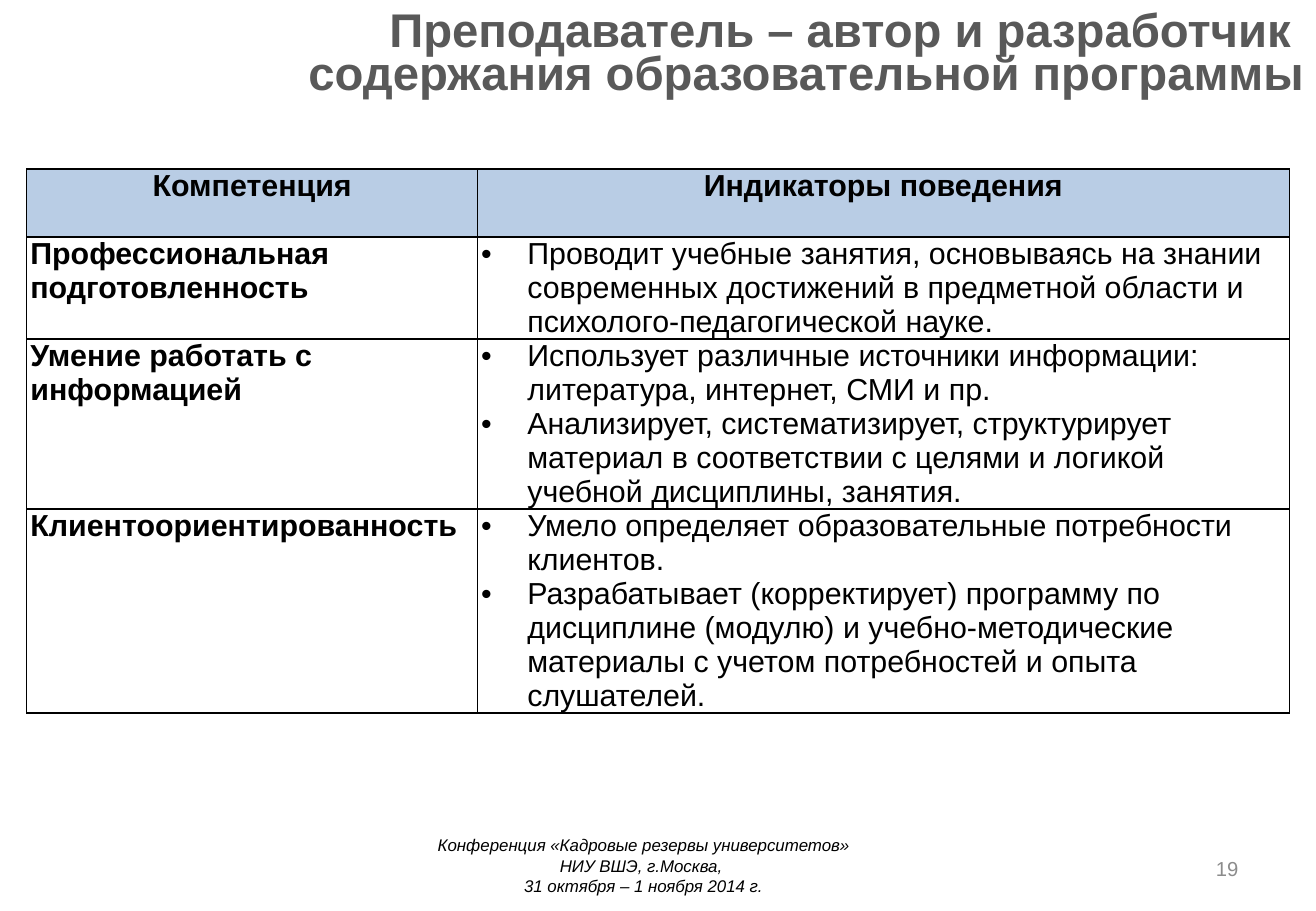
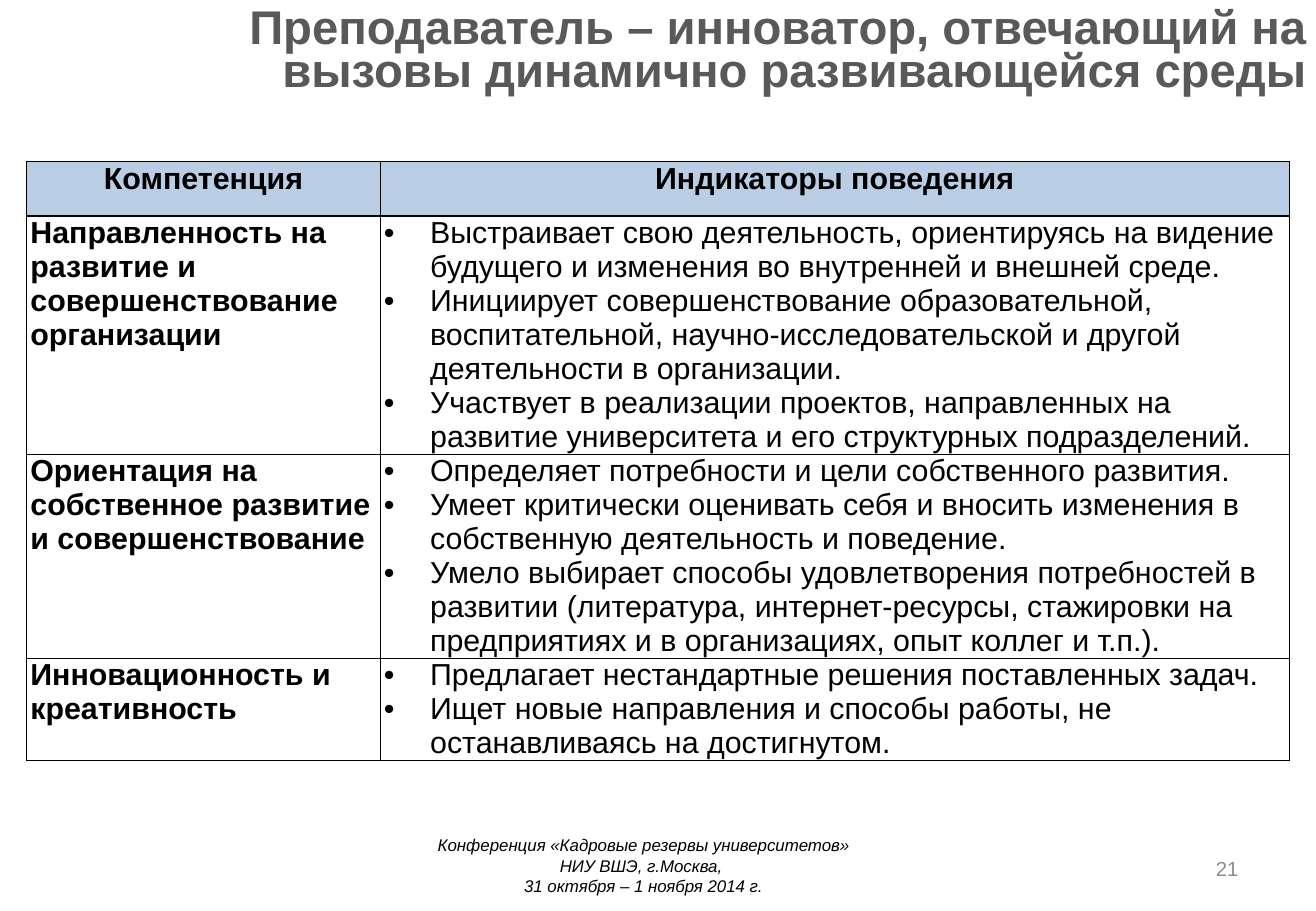
from pptx import Presentation
from pptx.dml.color import RGBColor
from pptx.enum.text import MSO_ANCHOR, MSO_AUTO_SIZE, PP_ALIGN
from pptx.oxml import parse_xml
from pptx.oxml.ns import nsdecls
from pptx.util import Inches, Pt

# Shared look
FONT = "Arial"
BLACK, TITLE_GRAY, NUMBER_GRAY, HEADER_BLUE = "000000", "595959", "8C8C8C", "B9CDE5"
HEADERS = ["Компетенция", "Индикаторы поведения"]
TABLE_LEFT, TABLE_WIDTH = 0.22, 10.39
FOOTER = [
    "Конференция «Кадровые резервы университетов»",
    "НИУ ВШЭ, г.Москва, ",
    "31 октября – 1 ноября 2014 г.",
]

# Content of each slide
SLIDES = [
    {
        "number": "19",
        "title": ["Преподаватель – автор и разработчик ",
                  "содержания образовательной программы"],
        "title_box": (0.14, 0.08, 10.69, 0.77),
        "table_top": 1.39,
        "first_col": 3.71,
        "row_heights": [0.56, 0.84, 1.4, 1.68],
        "rows": [
            ("Профессиональная подготовленность", [
                "Проводит учебные занятия, основываясь на знании современных "
                "достижений в предметной области и психолого-педагогической науке.",
            ]),
            ("Умение работать с информацией", [
                "Использует различные источники информации: литература, интернет, "
                "СМИ и пр.",
                "Анализирует, систематизирует, структурирует материал в соответствии "
                "с целями и логикой учебной дисциплины, занятия.",
            ]),
            ("Клиентоориентированность", [
                "Умело определяет образовательные потребности клиентов.",
                "Разрабатывает (корректирует) программу по дисциплине (модулю) и "
                "учебно-методические материалы с учетом потребностей и опыта "
                "слушателей.",
            ]),
        ],
    },
    {
        "number": "21",
        "title": ["Преподаватель – инноватор, отвечающий на "
                  "вызовы динамично развивающейся среды"],
        "title_box": (0.56, -0.03, 10.29, 0.94),
        "table_top": 1.33,
        "first_col": 2.91,
        "row_heights": [0.45, 1.96, 1.68, 0.84],
        "rows": [
            ("Направленность на развитие и совершенствование организации", [
                "Выстраивает свою деятельность, ориентируясь на видение будущего и "
                "изменения во внутренней и внешней среде.",
                "Инициирует совершенствование образовательной, воспитательной, "
                "научно-исследовательской и другой деятельности в организации.",
                "Участвует в реализации проектов, направленных на развитие "
                "университета и его структурных подразделений.",
            ]),
            ("Ориентация на собственное развитие и совершенствование", [
                "Определяет потребности и цели собственного развития.",
                "Умеет критически оценивать себя и вносить изменения в собственную "
                "деятельность и поведение.",
                "Умело выбирает способы удовлетворения потребностей в развитии "
                "(литература, интернет-ресурсы, стажировки на предприятиях и в "
                "организациях, опыт коллег и т.п.).",
            ]),
            ("Инновационность и креативность", [
                "Предлагает нестандартные решения поставленных задач.",
                "Ищет новые направления и способы работы, не останавливаясь на "
                "достигнутом.",
            ]),
        ],
    },
]


def rgb(color):
    return RGBColor.from_string(color)


def add_run(p, text, size, color=BLACK, bold=False, italic=False):
    r = p.add_run()
    r.text = text
    r.font.name = FONT
    r.font.size = Pt(size)
    r.font.bold = bold
    r.font.italic = italic
    r.font.color.rgb = rgb(color)


prs = Presentation()
prs.slide_width, prs.slide_height = Inches(10.83), Inches(7.5)

for data in SLIDES:
    s = prs.slides.add_slide(prs.slide_layouts[5])

    # Title
    sp = s.shapes.title
    sp.left, sp.top, sp.width, sp.height = [Inches(v) for v in data["title_box"]]
    tf = sp.text_frame
    tf.auto_size = MSO_AUTO_SIZE.NONE
    tf.vertical_anchor = MSO_ANCHOR.MIDDLE
    p = tf.paragraphs[0]
    p.alignment = PP_ALIGN.RIGHT
    p.line_spacing = 0.75
    for i, line in enumerate(data["title"]):
        if i:
            p.add_line_break()
        add_run(p, line, 28, TITLE_GRAY, bold=True)

    # Competence table
    heights = data["row_heights"]
    table = s.shapes.add_table(
        len(heights), 2, Inches(TABLE_LEFT), Inches(data["table_top"]),
        Inches(TABLE_WIDTH), Inches(sum(heights))).table
    table.first_row = table.horz_banding = False
    table.columns[0].width = Inches(data["first_col"])
    table.columns[1].width = Inches(TABLE_WIDTH - data["first_col"])
    for row, height in zip(table.rows, heights):
        row.height = Inches(height)

    # Cell frames and fills
    for i, cell in enumerate(table.iter_cells()):
        cell.margin_left = cell.margin_right = Inches(0.03)
        cell.margin_top = cell.margin_bottom = 0
        if i < len(HEADERS):
            cell.fill.solid()
            cell.fill.fore_color.rgb = rgb(HEADER_BLUE)
        else:
            cell.fill.background()
        for k, side in enumerate(["lnL", "lnR", "lnT", "lnB"]):
            cell._tc.get_or_add_tcPr().insert(k, parse_xml(
                f'<a:{side} {nsdecls("a")} w="12700"><a:solidFill>'
                f'<a:srgbClr val="{BLACK}"/></a:solidFill></a:{side}>'))

    # Header row
    for col, header in enumerate(HEADERS):
        p = table.cell(0, col).text_frame.paragraphs[0]
        p.alignment = PP_ALIGN.CENTER
        add_run(p, header, 18, bold=True)

    # Competences with bulleted indicators
    for row, (competence, indicators) in enumerate(data["rows"], 1):
        add_run(table.cell(row, 0).text_frame.paragraphs[0], competence, 18, bold=True)
        tf = table.cell(row, 1).text_frame
        for i, indicator in enumerate(indicators):
            p = tf.add_paragraph() if i else tf.paragraphs[0]
            pPr = p._p.get_or_add_pPr()
            pPr.set("marL", str(Inches(0.38)))
            pPr.set("indent", str(-Inches(0.38)))
            pPr.append(parse_xml(f'<a:buFont {nsdecls("a")} typeface="{FONT}"/>'))
            pPr.append(parse_xml(f'<a:buChar {nsdecls("a")} char="•"/>'))
            add_run(p, indicator, 18)

    # Conference footer and slide number
    for box, lines, size, color, italic, align in [
        ((3.21, 6.9, 4.17, 0.45), FOOTER, 10, BLACK, True, PP_ALIGN.CENTER),
        ((7.76, 6.95, 2.53, 0.4), [data["number"]], 12, NUMBER_GRAY, False,
         PP_ALIGN.RIGHT),
    ]:
        tf = s.shapes.add_textbox(*[Inches(v) for v in box]).text_frame
        tf.word_wrap = True
        tf.vertical_anchor = MSO_ANCHOR.MIDDLE
        for i, line in enumerate(lines):
            p = tf.add_paragraph() if i else tf.paragraphs[0]
            p.alignment = align
            add_run(p, line, size, color, italic=italic)

prs.save("out.pptx")
